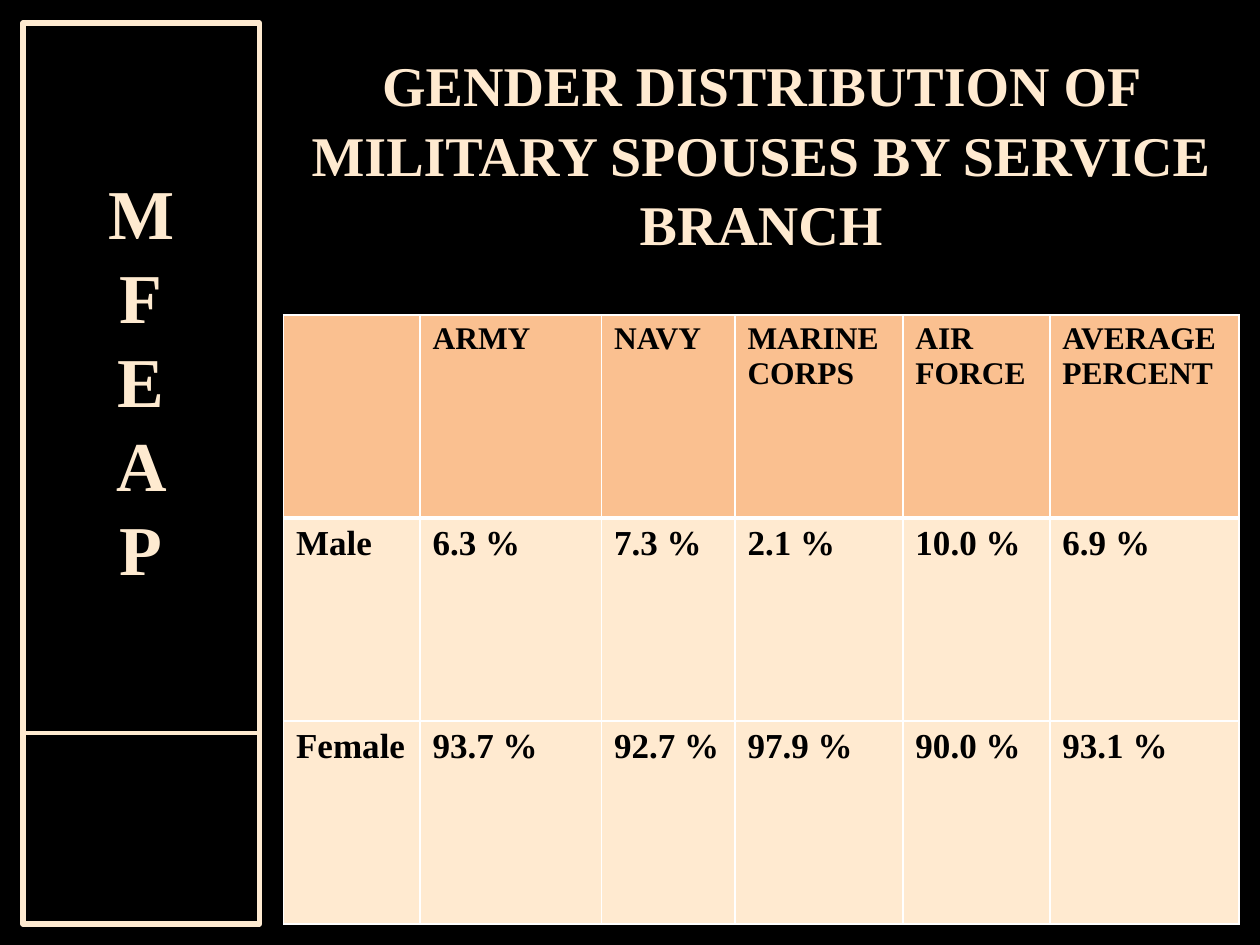
from pptx import Presentation
from pptx import util as u
from pptx.dml.color import RGBColor
from pptx.enum import shapes, text
from pptx.oxml.ns import qn
from lxml import etree

BLACK = RGBColor(0x00, 0x00, 0x00)
CREAM = RGBColor(0xFF, 0xEA, 0xD0)
FRAME = RGBColor(0xFE, 0xEA, 0xD0)
ORANGE = RGBColor(0xFA, 0xC0, 0x90)
WHITE = RGBColor(0xFF, 0xFF, 0xFF)

prs = Presentation()
prs.slide_width, prs.slide_height = u.Inches(10), u.Inches(7.5)
s = prs.slides.add_slide(prs.slide_layouts[6])
s.background.fill.solid()
s.background.fill.fore_color.rgb = BLACK

# Grid of 120 columns by 90 rows, in square units
U = prs.slide_width / 120


def grid(*units):
    return [u.Emu(round(n * U)) for n in units]


def write(tf, content, size, color, align=text.PP_ALIGN.LEFT, spacing=None):
    tf.word_wrap = True
    p = tf.paragraphs[0]
    p.alignment = align
    p.line_spacing = spacing
    r = p.add_run()
    r.text = content
    r.font.name, r.font.size, r.font.bold = "Times New Roman", u.Pt(size), True
    r.font.color.rgb = color


# Side panel: dividing line, then frame with stacked letters
x, y, w, h = 2.2, 2.2, 22.5, 85.8
line_y = 69.8
line = s.shapes.add_connector(shapes.MSO_CONNECTOR.STRAIGHT, *grid(x, line_y, x + w, line_y))
line.line.color.rgb, line.line.width = FRAME, u.Pt(2.5)
etree.SubElement(line._element.spPr, qn("a:effectLst"))

sp = s.shapes.add_shape(shapes.MSO_SHAPE.RECTANGLE, *grid(x, y, w, h))
sp.shadow.inherit = False
sp.fill.background()
sp.line.color.rgb, sp.line.width = FRAME, u.Pt(3)
tf = sp.text_frame
tf.vertical_anchor = text.MSO_ANCHOR.MIDDLE
tf.margin_top, tf.margin_bottom = 0, u.Inches(1.5)
write(tf, "MFEAP", 40, FRAME, align=text.PP_ALIGN.CENTER)
tf._txBody.bodyPr.set("vert", "wordArtVert")

# Title
tf = s.shapes.add_textbox(*grid(27, 4, 91, 21)).text_frame
tf.vertical_anchor = text.MSO_ANCHOR.MIDDLE
write(tf, "GENDER DISTRIBUTION OF MILITARY SPOUSES BY SERVICE BRANCH", 32, CREAM,
      align=text.PP_ALIGN.CENTER, spacing=1.04)

# Table
rows = [
    ["", "ARMY", "NAVY", "MARINE CORPS", "AIR FORCE", "AVERAGE PERCENT"],
    ["Male", "6.3 %", "7.3 %", "2.1 %", "10.0 %", "6.9 %"],
    ["Female", "93.7 %", "92.7 %", "97.9 %", "90.0 %", "93.1 %"],
]
widths = grid(13, 17.3, 12.7, 16, 14, 18)
table = s.shapes.add_table(len(rows), len(widths), *grid(27, 30, 91, 58)).table
for col, width in zip(table.columns, widths):
    col.width = width

for i, row in enumerate(rows):
    for j, value in enumerate(row):
        cell = table.cell(i, j)
        if value:
            write(cell.text_frame, value, 20 if i else 18, BLACK)
        # White borders, heavier under the header row
        pr = cell._tc.get_or_add_tcPr()
        for side in ("lnL", "lnR", "lnT", "lnB"):
            heavy = (i, side) in ((0, "lnB"), (1, "lnT"))
            ln = etree.SubElement(pr, qn(f"a:{side}"), w=str(u.Pt(3 if heavy else 1)))
            fill = etree.SubElement(ln, qn("a:solidFill"))
            etree.SubElement(fill, qn("a:srgbClr"), val=str(WHITE))
        cell.fill.solid()
        cell.fill.fore_color.rgb = CREAM if i else ORANGE

prs.save("out.pptx")
